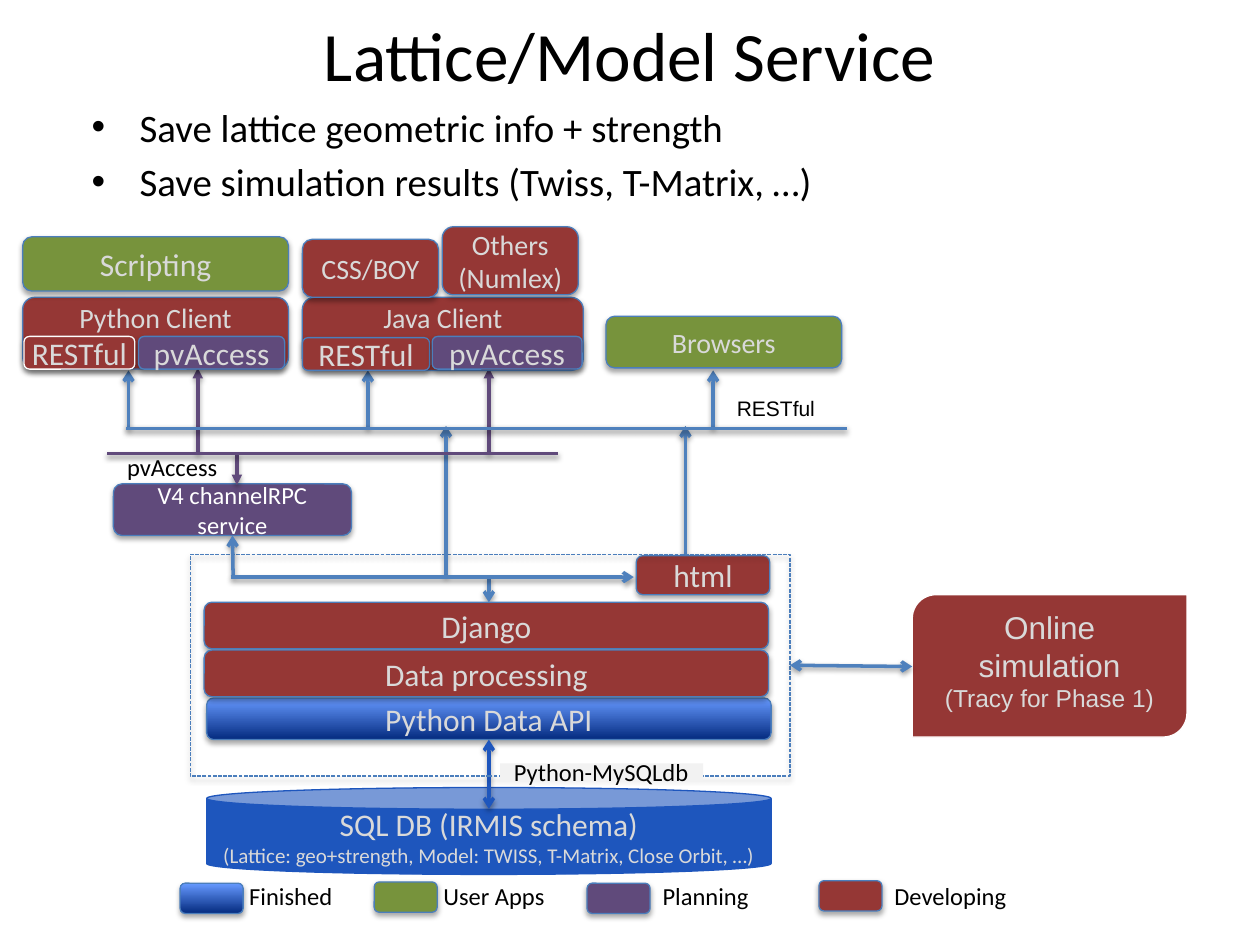
from lxml import etree
from pptx import Presentation
from pptx.dml.color import RGBColor
from pptx.enum.dml import MSO_LINE
from pptx.enum.shapes import MSO_CONNECTOR, MSO_SHAPE
from pptx.enum.text import MSO_ANCHOR, PP_ALIGN
from pptx.oxml.ns import qn
from pptx.util import Inches, Pt

ROUNDED, RECT = MSO_SHAPE.ROUNDED_RECTANGLE, MSO_SHAPE.RECTANGLE
CAN, DIAGONAL = MSO_SHAPE.CAN, MSO_SHAPE.ROUND_2_DIAG_RECTANGLE
STRAIGHT = MSO_CONNECTOR.STRAIGHT
LEFT, CENTER = PP_ALIGN.LEFT, PP_ALIGN.CENTER
TOP, MIDDLE = MSO_ANCHOR.TOP, MSO_ANCHOR.MIDDLE
SITE_BOTTOM, SITE_RIGHT = 2, 3

COLORS = {
    "developing": "953735", "user": "77933C", "planning": "604A7B",
    "finished_dark": "042B7F", "finished_light": "6699FF",
    "database": "1E56BD", "rest": "4F81BD", "outline": "4B7EBC",
    "label_back": "F2F2F2", "pale": "D9D9D9", "white": "FFFFFF", "black": "000000",
}


def rgb(name):
    return RGBColor.from_string(COLORS[name])


def add_shadow(shape, distance, opacity):
    """Soft shadow falling straight down; distance in points, opacity in percent."""
    effects = etree.SubElement(shape._element.spPr, qn("a:effectLst"))
    shadow = etree.SubElement(effects, qn("a:outerShdw"), blurRad=str(Pt(3.1)),
                              dist=str(Pt(distance)), dir="5400000", rotWithShape="0")
    black = etree.SubElement(shadow, qn("a:srgbClr"), val=COLORS["black"])
    etree.SubElement(black, qn("a:alpha"), val=str(opacity * 1000))


def write(shape, lines, color, font="Calibri", align=CENTER, anchor=MIDDLE, wrap=True,
          inset=0.1, top_inset=0.05):
    """Fill a shape with (text, size) paragraphs."""
    frame = shape.text_frame
    frame.word_wrap = wrap
    frame.vertical_anchor = anchor
    frame.margin_left = frame.margin_right = Inches(inset)
    frame.margin_top = Inches(top_inset)
    for i, (text, size) in enumerate(lines):
        paragraph = frame.add_paragraph() if i else frame.paragraphs[0]
        paragraph.text = text
        paragraph.alignment = align
        paragraph.font.size = Pt(size)
        paragraph.font.name = font
        paragraph.font.color.rgb = rgb(color)
    return frame


def add_box(slide, at, fill, lines=(), kind=ROUNDED, outline="outline", shadow=True,
            color="pale", **text_style):
    box = slide.shapes.add_shape(kind, *map(Inches, at))
    if fill == "finished":
        box.fill.gradient()
        box.fill.gradient_angle = 90
        for stop, shade in zip(box.fill.gradient_stops, ("finished_dark", "finished_light")):
            stop.color.rgb = rgb(shade)
    elif fill:
        box.fill.solid()
        box.fill.fore_color.rgb = rgb(fill)
    else:
        box.fill.background()
    if outline:
        box.line.color.rgb = rgb(outline)
        box.line.width = Pt(0.75)
    else:
        box.line.fill.background()
    if shadow:
        add_shadow(box, 1.8, 35)
    else:
        box.shadow.inherit = False
    write(box, lines, color, **text_style)
    return box


def add_label(slide, at, text, size=14, font="Calibri"):
    label = slide.shapes.add_textbox(*map(Inches, at))
    write(label, [(text, size)], "black", font, LEFT, TOP, wrap=False)


def add_link(slide, start, end, color="rest", head=None, tail="arrow"):
    link = slide.shapes.add_connector(STRAIGHT, *map(Inches, start + end))
    link.line.color.rgb = rgb(color)
    link.line.width = Pt(2)
    outline = link.line._get_or_add_ln()
    for tag, arrow in (("a:headEnd", head), ("a:tailEnd", tail)):
        if arrow:
            etree.SubElement(outline, qn(tag), type=arrow)
    add_shadow(link, 1.6, 38)
    return link


def add_heading(slide):
    title = slide.shapes.add_textbox(Inches(0.5), Inches(0.01), Inches(9), Inches(0.83))
    write(title, [("Lattice/Model Service", 39.6)], "black")

    goals = slide.shapes.add_textbox(Inches(0.63), Inches(0.77), Inches(9), Inches(0.87))
    frame = write(goals, [("Save lattice geometric info + strength", 22.2),
                          ("Save simulation results (Twiss, T-Matrix, …)", 22.2)],
                  "black", align=LEFT, anchor=TOP)
    for paragraph in frame.paragraphs:
        paragraph.space_before = Pt(4.4)
        properties = paragraph._p.get_or_add_pPr()
        properties.set("marL", str(Inches(0.38)))
        properties.set("indent", str(-Inches(0.38)))
        # The schema wants bullets ahead of the default run properties
        defaults = properties.find(qn("a:defRPr"))
        defaults.addprevious(etree.Element(qn("a:buFont"), typeface="Arial"))
        defaults.addprevious(etree.Element(qn("a:buChar"), char="•"))


def add_server(slide):
    # Database and the layers above it
    add_box(slide, (1.64, 6.25, 4.48, 0.69), "database",
            [("SQL DB (IRMIS schema)", 18),
             ("(Lattice: geo+strength, Model: TWISS, T-Matrix, Close Orbit, …)", 12)],
            CAN, "database", shadow=False)
    data_api = add_box(slide, (1.64, 5.54, 4.48, 0.33), "finished", [("Python Data API", 18)])
    add_link(slide, (3.88, 5.87), (3.88, 6.42), "database", "arrow").begin_connect(
        data_api, SITE_BOTTOM)
    add_link(slide, (5.44, 4.42), (5.44, 3.38))
    add_box(slide, (5.05, 4.41, 1.06, 0.31), "developing", [("html", 18)])
    add_link(slide, (3.88, 4.58), (3.88, 4.78))
    for top, layer in ((4.78, "Django"), (5.16, "Data processing")):
        add_box(slide, (1.62, top, 4.48, 0.37), "developing", [(layer, 18)])

    # Dashed frame, with the driver label on its lower edge
    server = add_box(slide, (1.51, 4.4, 4.76, 1.76), None, kind=RECT)
    server.line.dash_style = MSO_LINE.SQUARE_DOT
    add_box(slide, (3.97, 6.06, 1.61, 0.14), "label_back", kind=RECT, outline=None, shadow=False)
    add_label(slide, (3.98, 5.96, 1.6, 0.34), "Python-MySQLdb")

    # Simulation beside the frame
    add_box(slide, (7.24, 4.72, 2.18, 1.13), "developing",
            [("Online simulation", 18), ("(Tracy for Phase 1)", 14)],
            DIAGONAL, "white", shadow=False, font="Arial", anchor=TOP)
    add_link(slide, (6.27, 5.28), (7.24, 5.29), head="arrow").begin_connect(server, SITE_RIGHT)


def add_buses(slide):
    # From the server up to the buses
    add_link(slide, (3.54, 4.58), (3.54, 3.38))
    rpc = add_box(slide, (0.9, 3.84, 1.89, 0.41), "planning",
                  [("V4 channelRPC service", 14)], color="white")
    add_link(slide, (1.85, 4.57), (1.85, 4.25)).end_connect(rpc, SITE_BOTTOM)
    add_link(slide, (1.83, 4.58), (5.03, 4.58))

    # pvAccess bus
    for x, end in ((3.88, 2.92), (1.57, 2.92), (1.88, 3.85)):
        add_link(slide, (x, 3.6), (x, end), "planning", tail="triangle")
    add_link(slide, (0.85, 3.6), (4.43, 3.6), "planning", tail=None)
    add_label(slide, (0.91, 3.54, 0.92, 0.34), "pvAccess")

    # RESTful bus
    for x in (1.02, 2.92, 5.66):
        add_link(slide, (x, 3.4), (x, 2.94))
    add_link(slide, (1, 3.4), (6.72, 3.4), tail=None)
    add_label(slide, (5.75, 3.09, 0.83, 0.3), "RESTful", 12, "Arial")


def add_clients(slide):
    for left, width, height, client in ((0.18, 2.11, 0.57, "Python Client"),
                                        (2.4, 2.23, 0.58, "Java Client")):
        add_box(slide, (left, 2.36, width, height), "developing", [(client, 16)],
                anchor=TOP, top_inset=0)
    add_box(slide, (0.18, 1.88, 2.11, 0.43), "user", [("Scripting", 18)])
    add_box(slide, (2.4, 1.9, 1.08, 0.46), "developing", [("CSS/BOY", 16)])
    add_box(slide, (3.51, 1.8, 1.08, 0.54), "developing",
            [("Others", 16), ("(Numlex)", 16)], inset=0)
    add_box(slide, (4.81, 2.51, 1.87, 0.41), "user", [("Browsers", 16)])

    # Protocols inside the two clients
    for left, top, width, protocol, fill, outline in (
            (2.4, 2.68, 1.01, "RESTful", "developing", "outline"),
            (3.43, 2.67, 1.19, "pvAccess", "planning", "outline"),
            (0.19, 2.67, 0.88, "RESTful", "developing", "white"),
            (1.1, 2.67, 1.16, "pvAccess", "planning", "outline")):
        add_box(slide, (left, top, width, 0.26), fill, [(protocol, 18)],
                outline=outline, inset=0)


def add_legend(slide):
    for left, top, label_left, label_width, status, fill in (
            (1.43, 7.01, 1.88, 0.87, "Finished", "finished"),
            (2.97, 7, 3.42, 1.01, "User Apps", "user"),
            (4.66, 7.01, 5.16, 0.89, "Planning", "planning"),
            (6.5, 6.99, 7, 1.1, "Developing", "developing")):
        add_box(slide, (left, top, 0.5, 0.24), fill)
        add_label(slide, (label_left, 6.94, label_width, 0.34), status)


def main():
    deck = Presentation()
    deck.slide_width, deck.slide_height = Inches(10), Inches(7.5)
    slide = deck.slides.add_slide(deck.slide_layouts[6])
    add_heading(slide)
    add_server(slide)
    add_buses(slide)
    add_clients(slide)
    add_legend(slide)
    deck.save("out.pptx")


if __name__ == "__main__":
    main()
